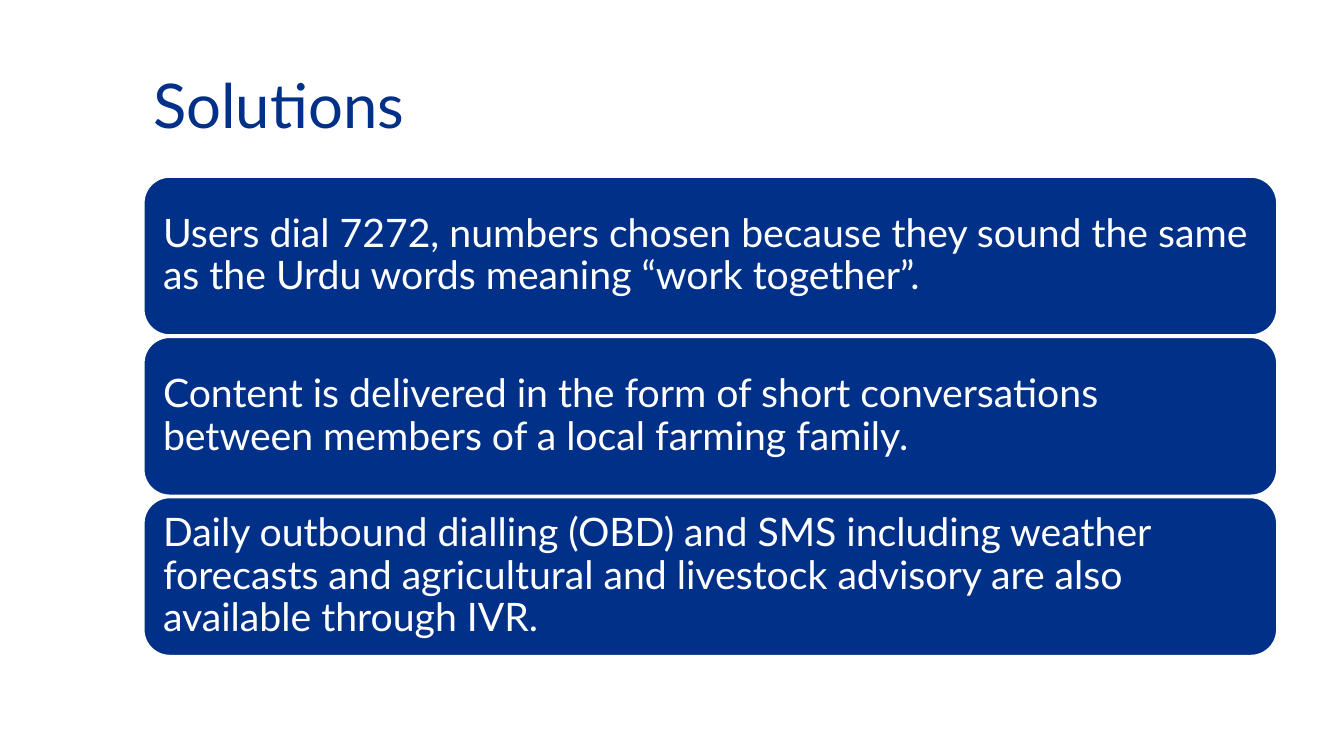
from pptx import Presentation
from pptx.dml.color import RGBColor
from pptx.enum.shapes import MSO_SHAPE
from pptx.enum.text import MSO_ANCHOR, PP_ALIGN
from pptx.util import Inches, Pt

BLUE = RGBColor(0x00, 0x30, 0x87)
WHITE = RGBColor(0xFF, 0xFF, 0xFF)
ROUNDED = MSO_SHAPE.ROUNDED_RECTANGLE
MIDDLE = MSO_ANCHOR.MIDDLE
LEFT_ALIGN = PP_ALIGN.LEFT

FONT = "Lato"
LEFT, WIDTH = 1.42, 11.25
FIRST_TOP, CARD_HEIGHT, CARD_STEP = 1.75, 1.58, 1.59
CARD_INSET = Inches(0.12)

SOLUTIONS = [
    "Users dial 7272, numbers chosen because they sound the same "
    "as the Urdu words meaning “work together”.",
    "Content is delivered in the form of short conversations "
    "between members of a local farming family.",
    "Daily outbound dialling (OBD) and SMS including weather forecasts "
    "and agricultural and livestock advisory are also available through IVR.",
]


def write_text(shape, text, size, color):
    frame = shape.text_frame
    frame.word_wrap = True
    frame.vertical_anchor = MIDDLE
    para = frame.paragraphs[0]
    para.text = text
    para.alignment = LEFT_ALIGN
    para.font.name = FONT
    para.font.size = Pt(size)
    para.font.color.rgb = color
    return frame


deck = Presentation()
deck.slide_width, deck.slide_height = Inches(13.33), Inches(7.5)
page = deck.slides.add_slide(deck.slide_layouts[6])

# Title
title = page.shapes.add_textbox(Inches(LEFT), Inches(0.52), Inches(WIDTH), Inches(1.03))
write_text(title, "Solutions", 44, BLUE)

# Stacked solution cards
for index, solution in enumerate(SOLUTIONS):
    card = page.shapes.add_shape(
        ROUNDED, Inches(LEFT), Inches(FIRST_TOP + index * CARD_STEP),
        Inches(WIDTH), Inches(CARD_HEIGHT))
    card.shadow.inherit = False
    card.fill.solid()
    card.fill.fore_color.rgb = BLUE
    card.line.color.rgb = WHITE
    card.line.width = Pt(2)
    frame = write_text(card, solution, 28, WHITE)
    frame.margin_left = frame.margin_right = CARD_INSET
    frame.margin_top = frame.margin_bottom = CARD_INSET
    frame.paragraphs[0].line_spacing = 0.9

deck.save("out.pptx")
